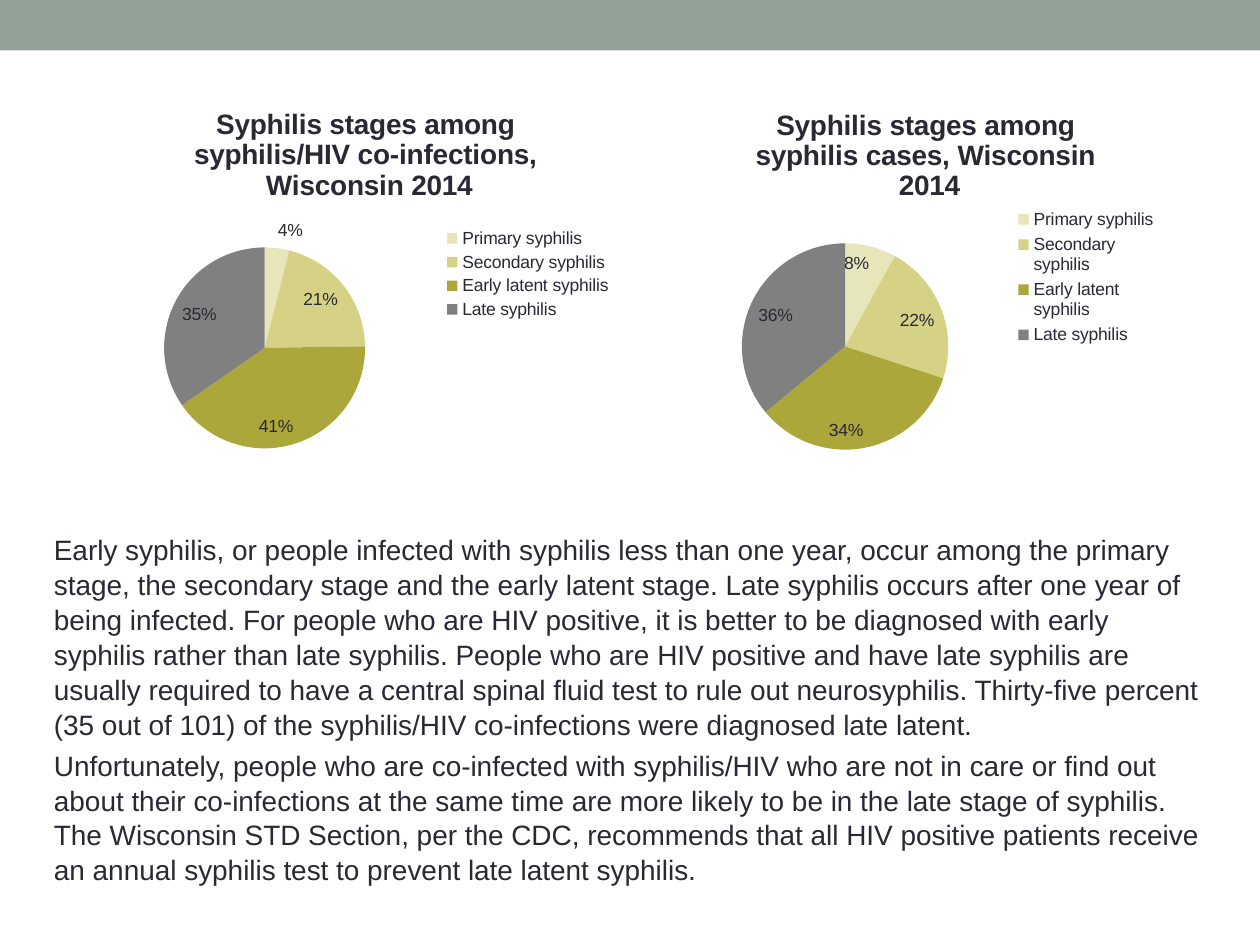
from lxml import etree
from pptx import Presentation
from pptx import util as u
from pptx.chart.data import CategoryChartData
from pptx.dml.color import RGBColor
from pptx.enum import chart as ch, shapes
from pptx.oxml import parse_xml
from pptx.oxml.ns import nsdecls, qn

INK = RGBColor(0x29, 0x29, 0x34)
BAND = RGBColor(0x93, 0xA2, 0x99)
STAGES = {
    "Primary syphilis": RGBColor(0xE7, 0xE5, 0xBA),
    "Secondary syphilis": RGBColor(0xD5, 0xD2, 0x86),
    "Early latent syphilis": RGBColor(0xAC, 0xA7, 0x3B),
    "Late syphilis": RGBColor(0x80, 0x80, 0x80),
}
PARAGRAPHS = [
    "Early syphilis, or people infected with syphilis less than one year, occur among "
    "the primary stage, the secondary stage and the early latent stage. Late syphilis "
    "occurs after one year of being infected. For people who are HIV positive, it is "
    "better to be diagnosed with early syphilis rather than late syphilis. People who "
    "are HIV positive and have late syphilis are usually required to have a central "
    "spinal fluid test to rule out neurosyphilis. Thirty-five percent (35 out of 101) "
    "of the syphilis/HIV co-infections were diagnosed late latent.",
    "Unfortunately, people who are co-infected with syphilis/HIV who are not in care or "
    "find out about their co-infections at the same time are more likely to be in the "
    "late stage of syphilis. The Wisconsin STD Section, per the CDC, recommends that all "
    "HIV positive patients receive an annual syphilis test to prevent late latent "
    "syphilis.",
]


def manual_layout(element, x, y, w=None, h=None, inner=False):
    """Place a chart part by fractions of the chart's size."""
    for old in element.findall(qn("c:layout")):
        element.remove(old)
    tags = [("layoutTarget", "inner")] if inner else []
    tags += [("xMode", "edge"), ("yMode", "edge"), ("x", x), ("y", y)]
    if w is not None:
        tags += [("w", w), ("h", h)]
    layout = parse_xml(f"<c:layout {nsdecls('c')}/>")
    manual = etree.SubElement(layout, qn("c:manualLayout"))
    for tag, value in tags:
        etree.SubElement(manual, qn(f"c:{tag}")).set("val", str(value))
    # The layout follows the title's text or the legend's position
    index = 0 if inner else 1
    element.insert(index, layout)


class SlideBuilder:
    font_name = "Arial"

    def __init__(self, slide):
        self.slide = slide

    def style(self, font, size, bold=False):
        font.name, font.size, font.bold = self.font_name, u.Pt(size), bold
        font.color.rgb = INK

    def band(self, x, y, w, h):
        band = self.slide.shapes.add_shape(
            shapes.MSO_SHAPE.RECTANGLE, *map(u.Inches, (x, y, w, h)))
        band.shadow.inherit = False
        band.fill.solid()
        band.fill.fore_color.rgb = BAND
        band.line.fill.background()

    def body(self, x, y, w, h, paragraphs):
        frame = self.slide.shapes.add_textbox(*map(u.Inches, (x, y, w, h))).text_frame
        frame.word_wrap = True
        for i, wording in enumerate(paragraphs):
            paragraph = frame.paragraphs[0] if i == 0 else frame.add_paragraph()
            paragraph.text = wording
            paragraph.space_before = u.Pt(3.2)
            paragraph.line_spacing = 1.04
            self.style(paragraph.font, 16)

    def pie(self, box, title_lines, shares, title_at, pie_at, legend_at, outside=()):
        data = CategoryChartData()
        data.categories = list(STAGES)
        data.add_series("Series 1", shares)
        chart = self.slide.shapes.add_chart(
            ch.XL_CHART_TYPE.PIE, *map(u.Inches, box), data).chart
        self.style(chart.font, 10)

        # Title
        frame = chart.chart_title.text_frame
        for i, line in enumerate(title_lines):
            paragraph = frame.paragraphs[0] if i == 0 else frame.add_paragraph()
            paragraph.text = line
            self.style(paragraph.runs[0].font, 16, bold=True)
        manual_layout(chart.chart_title._element, *title_at)

        # Legend and plot area
        chart.has_legend = True
        chart.legend.position = ch.XL_LEGEND_POSITION.RIGHT
        chart.legend.include_in_layout = False
        self.style(chart.legend.font, 10)
        manual_layout(chart.legend._element, *legend_at)
        plot = chart.plots[0]
        manual_layout(plot._element.getparent(), *pie_at, inner=True)

        # Slices and percentages
        plot.vary_by_categories = True
        plot.has_data_labels = True
        labels = plot.data_labels
        labels.show_percentage, labels.show_value = True, False
        labels.number_format, labels.number_format_is_linked = "0%", False
        labels.position = ch.XL_LABEL_POSITION.INSIDE_END
        self.style(labels.font, 10)
        for i, colour in enumerate(STAGES.values()):
            fill = plot.series[0].points[i].format.fill
            fill.solid()
            fill.fore_color.rgb = colour
        for i in outside:
            label = plot.series[0].points[i].data_label
            label.position = ch.XL_LABEL_POSITION.OUTSIDE_END
            own = label._dLbl
            own.find(qn("c:showVal")).set("val", "0")
            own.find(qn("c:showPercent")).set("val", "1")
            # The series' own label settings override those of the plot
            series_labels = plot.series[0].data_labels
            series_labels.show_percentage, series_labels.show_value = True, False
            series_labels.number_format = "0%"
            series_labels.number_format_is_linked = False
            series_labels.position = ch.XL_LABEL_POSITION.INSIDE_END
            self.style(series_labels.font, 10)


def main():
    deck = Presentation()
    deck.slide_width, deck.slide_height = u.Inches(10), u.Inches(7.5)
    builder = SlideBuilder(deck.slides.add_slide(deck.slide_layouts[6]))

    # Top band and explanation
    builder.band(0, 0, 10, 0.4)
    builder.body(0.33, 4.17, 9.33, 2.92, PARAGRAPHS)

    # Co-infections on the left, all cases on the right
    builder.pie(
        (0.75, 0.67, 4.22, 3.01),
        ["Syphilis stages among ", "syphilis/HIV co-infections, ", "Wisconsin 2014"],
        (4, 21, 41, 35), title_at=(0.18, 0.05), pie_at=(0.13, 0.43, 0.38, 0.53),
        legend_at=(0.64, 0.37, 0.35, 0.26), outside=[0])
    builder.pie(
        (5.42, 0.67, 3.9, 3.06),
        ["Syphilis stages among ", "syphilis cases, Wisconsin ", "2014"],
        (8, 22, 34, 36), title_at=(0.14, 0.05), pie_at=(0.12, 0.41, 0.42, 0.54),
        legend_at=(0.66, 0.31, 0.32, 0.38))

    deck.save("out.pptx")


if __name__ == "__main__":
    main()
